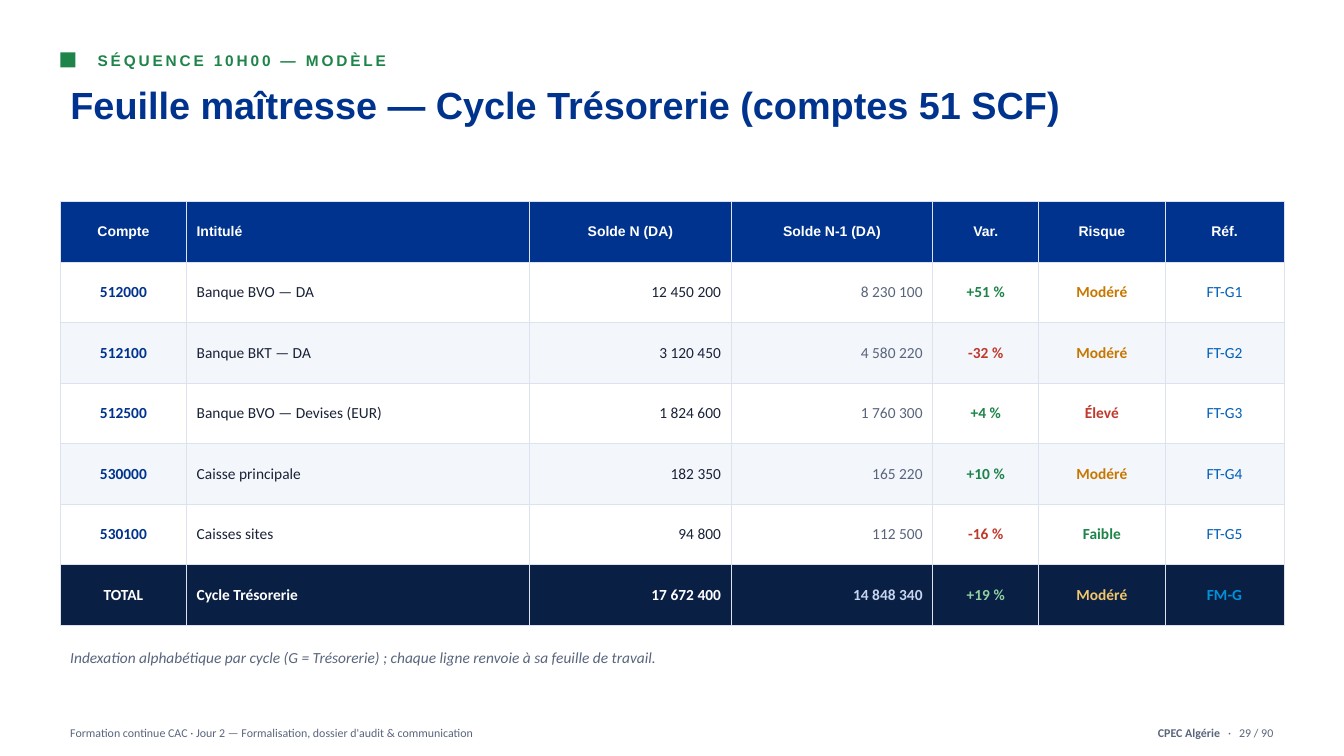
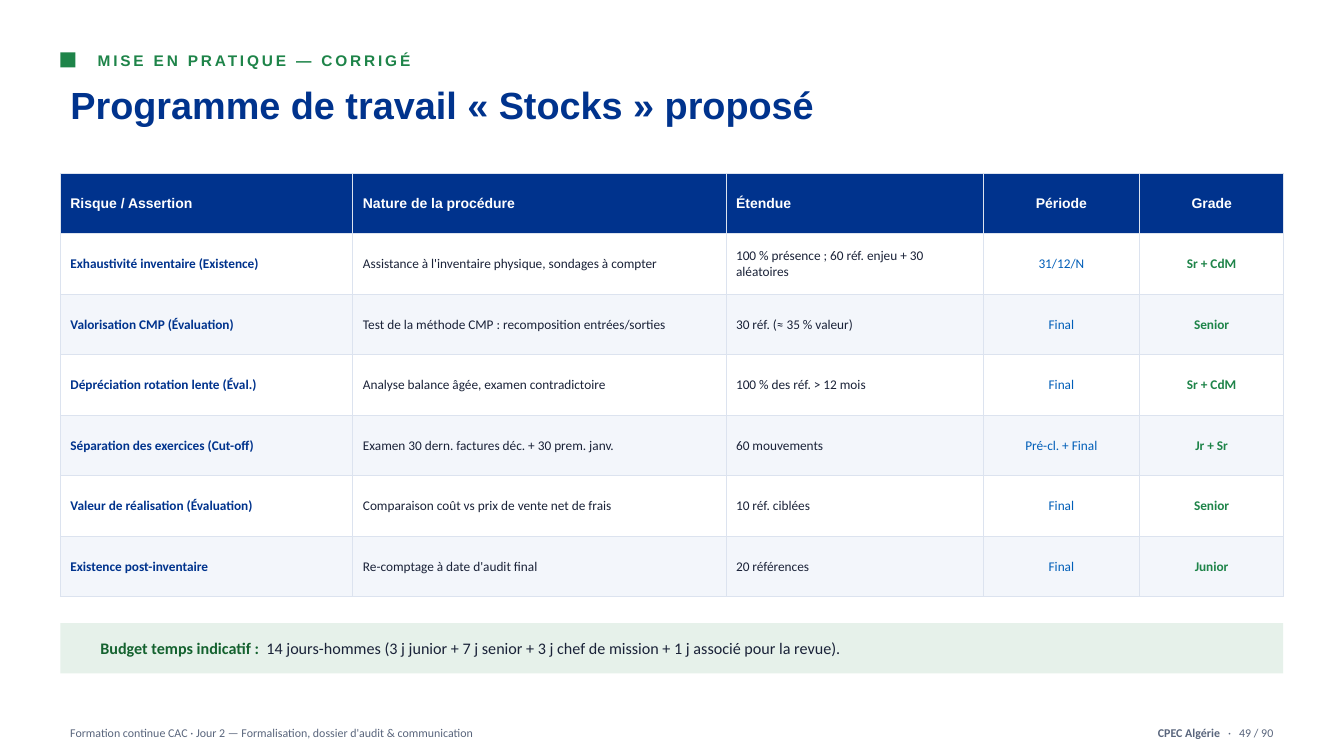
from collections import namedtuple

from lxml.etree import SubElement
from pptx import Presentation
from pptx.dml.color import RGBColor
from pptx.enum.shapes import MSO_SHAPE as Shape
from pptx.enum.text import MSO_ANCHOR as Anchor, MSO_AUTO_SIZE as AutoSize, PP_ALIGN as Align
from pptx.oxml.ns import qn
from pptx.util import Cm, Pt

# Colours
NAVY = RGBColor(0x0A, 0x1F, 0x44)
BLUE = RGBColor(0x00, 0x33, 0x8D)
LINK = RGBColor(0x00, 0x5E, 0xB8)
CYAN = RGBColor(0x00, 0x91, 0xDA)
GREEN = RGBColor(0x1E, 0x84, 0x49)
DARK_GREEN = RGBColor(0x14, 0x62, 0x2F)
MINT = RGBColor(0x8F, 0xD0, 0xA0)
PALE_GREEN = RGBColor(0xE6, 0xF1, 0xEA)
RED = RGBColor(0xC0, 0x39, 0x2B)
AMBER = RGBColor(0xC7, 0x77, 0x00)
SAND = RGBColor(0xF2, 0xC6, 0x6B)
INK = RGBColor(0x1A, 0x22, 0x38)
GREY = RGBColor(0x59, 0x65, 0x7C)
PERIWINKLE = RGBColor(0xC6, 0xD4, 0xEE)
WHITE = RGBColor(0xFF, 0xFF, 0xFF)
STRIPE = RGBColor(0xF3, 0xF6, 0xFB)
BORDER = RGBColor(0xDC, 0xE3, 0xEF)

# Shared grid, in centimetres
LEFT, WIDTH = 1.52, 30.81
ROW_HEIGHT = 1.524
HEADING, BODY = "Arial", "Calibri"
PAGES = 90

Box = namedtuple("Box", "left top width height")
Column = namedtuple("Column", "header width align color bold")


def place(box):
    return [Cm(length) for length in box]


def write(frame, text, font=BODY, size=11, color=INK, bold=False, italic=False,
          align=Align.LEFT, anchor=Anchor.MIDDLE, spacing=0, line_spacing=None):
    """Fill a text frame with a string, or with (text, overrides) runs."""
    frame.word_wrap = True
    frame.vertical_anchor = anchor
    paragraph = frame.paragraphs[0]
    paragraph.alignment = align
    if line_spacing:
        paragraph.line_spacing = line_spacing
    base = dict(font=font, size=size, color=color, bold=bold, italic=italic, spacing=spacing)
    for part, changes in ([(text, {})] if isinstance(text, str) else text):
        style = {**base, **changes}
        run = paragraph.add_run()
        run.text = part
        run.font.name = style["font"]
        run.font.size = Pt(style["size"])
        run.font.color.rgb = style["color"]
        run.font.bold = style["bold"]
        run.font.italic = style["italic"]
        if style["spacing"]:
            run.font._element.set("spc", str(round(style["spacing"] * 100)))


def add_text(slide, box, text, **style):
    write(slide.shapes.add_textbox(*place(box)).text_frame, text, **style)


def add_block(slide, box, color):
    shape = slide.shapes.add_shape(Shape.RECTANGLE, *place(box))
    shape.shadow.inherit = False
    shape.fill.solid()
    shape.fill.fore_color.rgb = color
    shape.line.fill.background()


# Parts shared by the slides
def add_header(slide, kicker, title):
    add_block(slide, Box(LEFT, 1.32, 0.38, 0.38), GREEN)
    add_text(slide, Box(2.21, 1.17, 30.12, 0.71), kicker,
             font=HEADING, color=GREEN, bold=True, spacing=2)
    heading = slide.shapes.title
    heading.left, heading.top, heading.width, heading.height = place(Box(LEFT, 1.98, WIDTH, 2.41))
    heading.text_frame.auto_size = AutoSize.NONE
    write(heading.text_frame, title, font=HEADING, size=27, color=BLUE, bold=True,
          anchor=Anchor.TOP, line_spacing=0.98)


def add_footer(slide, number):
    style = dict(size=8.5, color=GREY)
    gap = (" ", dict(spacing=3.8))
    add_text(slide, Box(LEFT, 18.08, 24.13, 0.76),
             "Formation continue CAC · Jour 2 — Formalisation, dossier d'audit & communication", **style)
    add_text(slide, Box(24.46, 18.08, 7.87, 0.76),
             [("CPEC Algérie", dict(bold=True)), gap, ("·", {}), gap, (f"{number} / {PAGES}", {})],
             align=Align.RIGHT, **style)


def new_slide(presentation, kicker, title, number):
    slide = presentation.slides.add_slide(presentation.slide_layouts[5])
    add_header(slide, kicker, title)
    add_footer(slide, number)
    return slide


# Tables
def set_borders(cell):
    properties = cell._tc.get_or_add_tcPr()
    for side in ("lnL", "lnR", "lnT", "lnB"):
        line = SubElement(properties, qn(f"a:{side}"), w=str(Pt(0.75)))
        fill = SubElement(line, qn("a:solidFill"))
        SubElement(fill, qn("a:srgbClr"), val=str(BORDER))


def fill_cell(cell, text, background, **style):
    set_borders(cell)
    cell.fill.solid()
    cell.fill.fore_color.rgb = background
    cell.vertical_anchor = Anchor.MIDDLE
    write(cell.text_frame, text, **style)


def add_grid(slide, top, columns, rows, size, total=None, total_colors=()):
    """Draw a header, striped rows and an optional total row."""
    count = len(rows) + 1 + bool(total)
    box = Box(LEFT, top, WIDTH, ROW_HEIGHT * count)
    table = slide.shapes.add_table(count, len(columns), *place(box)).table
    table.first_row = table.horz_banding = False
    for row in table.rows:
        row.height = Cm(ROW_HEIGHT)
    for index, column in enumerate(columns):
        table.columns[index].width = Cm(column.width)
        header_align = Align.LEFT if column.align == Align.LEFT else Align.CENTER
        fill_cell(table.cell(0, index), column.header, BLUE, font=HEADING, size=10,
                  color=WHITE, bold=True, align=header_align)
        for number, row in enumerate(rows, 1):
            text = row[index]
            color = column.color(text) if callable(column.color) else column.color
            fill_cell(table.cell(number, index), text, WHITE if number % 2 else STRIPE,
                      size=size, color=color, bold=column.bold, align=column.align)
        if total:
            fill_cell(table.cell(count - 1, index), total[index], NAVY, size=size,
                      color=total_colors[index], bold=True, align=column.align)


def change_color(text):
    return RED if text.startswith("-") else GREEN


def risk_color(text):
    return {"Faible": GREEN, "Modéré": AMBER, "Élevé": RED}[text]


# Slides
def build_lead_sheet(presentation):
    slide = new_slide(presentation, "SÉQUENCE 10H00 — MODÈLE",
                      "Feuille maîtresse — Cycle Trésorerie (comptes 51 SCF)", 29)
    columns = [
        Column("Compte", 3.18, Align.CENTER, BLUE, True),
        Column("Intitulé", 8.64, Align.LEFT, INK, False),
        Column("Solde N (DA)", 5.08, Align.RIGHT, INK, False),
        Column("Solde N-1 (DA)", 5.08, Align.RIGHT, GREY, False),
        Column("Var.", 2.67, Align.CENTER, change_color, True),
        Column("Risque", 3.18, Align.CENTER, risk_color, True),
        Column("Réf.", 3, Align.CENTER, LINK, False),
    ]
    rows = [
        ("512000", "Banque BVO — DA", "12 450 200", "8 230 100", "+51 %", "Modéré", "FT-G1"),
        ("512100", "Banque BKT — DA", "3 120 450", "4 580 220", "-32 %", "Modéré", "FT-G2"),
        ("512500", "Banque BVO — Devises (EUR)", "1 824 600", "1 760 300", "+4 %", "Élevé", "FT-G3"),
        ("530000", "Caisse principale", "182 350", "165 220", "+10 %", "Modéré", "FT-G4"),
        ("530100", "Caisses sites", "94 800", "112 500", "-16 %", "Faible", "FT-G5"),
    ]
    total = ("TOTAL", "Cycle Trésorerie", "17 672 400", "14 848 340", "+19 %", "Modéré", "FM-G")
    add_grid(slide, 5.08, columns, rows, 11, total,
             (WHITE, WHITE, WHITE, PERIWINKLE, MINT, SAND, CYAN))
    add_text(slide, Box(LEFT, 16.13, WIDTH, 0.89),
             "Indexation alphabétique par cycle (G = Trésorerie) ; "
             "chaque ligne renvoie à sa feuille de travail.", color=GREY, italic=True)


def add_budget_band(slide, box):
    add_block(slide, box, PALE_GREEN)
    inset = 0.76
    label = dict(color=DARK_GREEN, bold=True)
    add_text(slide, Box(box.left + inset, box.top, box.width - 2 * inset, box.height), [
        ("Budget temps indicatif :", label),
        (" ", dict(label, spacing=2.6)),
        ("14 jours-hommes (3 j junior + 7 j senior + 3 j chef de mission "
         "+ 1 j associé pour la revue).", {}),
    ], size=11.5)


def build_work_programme(presentation):
    slide = new_slide(presentation, "MISE EN PRATIQUE — CORRIGÉ",
                      "Programme de travail « Stocks » proposé", 49)
    columns = [
        Column("Risque / Assertion", 7.37, Align.LEFT, BLUE, True),
        Column("Nature de la procédure", 9.4, Align.LEFT, INK, False),
        Column("Étendue", 6.48, Align.LEFT, INK, False),
        Column("Période", 3.94, Align.CENTER, LINK, False),
        Column("Grade", 3.63, Align.CENTER, GREEN, True),
    ]
    rows = [
        ("Exhaustivité inventaire (Existence)", "Assistance à l'inventaire physique, sondages à compter",
         "100 % présence ; 60 réf. enjeu + 30 aléatoires", "31/12/N", "Sr + CdM"),
        ("Valorisation CMP (Évaluation)", "Test de la méthode CMP : recomposition entrées/sorties",
         "30 réf. (≈ 35 % valeur)", "Final", "Senior"),
        ("Dépréciation rotation lente (Éval.)", "Analyse balance âgée, examen contradictoire",
         "100 % des réf. > 12 mois", "Final", "Sr + CdM"),
        ("Séparation des exercices (Cut-off)", "Examen 30 dern. factures déc. + 30 prem. janv.",
         "60 mouvements", "Pré-cl. + Final", "Jr + Sr"),
        ("Valeur de réalisation (Évaluation)", "Comparaison coût vs prix de vente net de frais",
         "10 réf. ciblées", "Final", "Senior"),
        ("Existence post-inventaire", "Re-comptage à date d'audit final",
         "20 références", "Final", "Junior"),
    ]
    add_grid(slide, 4.37, columns, rows, 9.5)
    add_budget_band(slide, Box(LEFT, 15.7, WIDTH, 1.27))


def main():
    presentation = Presentation()
    presentation.slide_width, presentation.slide_height = Cm(33.86), Cm(19.05)
    build_lead_sheet(presentation)
    build_work_programme(presentation)
    presentation.save("out.pptx")


if __name__ == "__main__":
    main()
